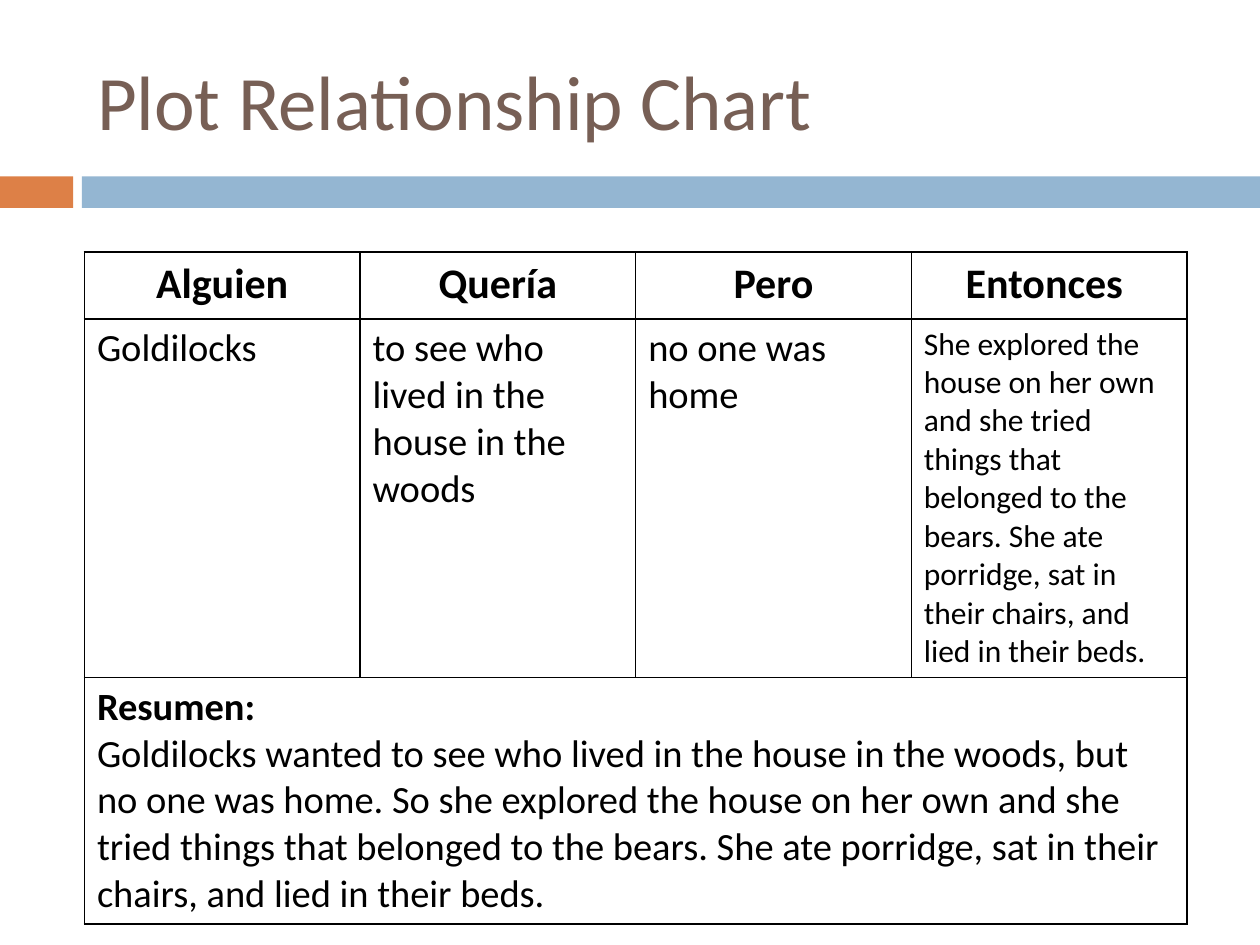
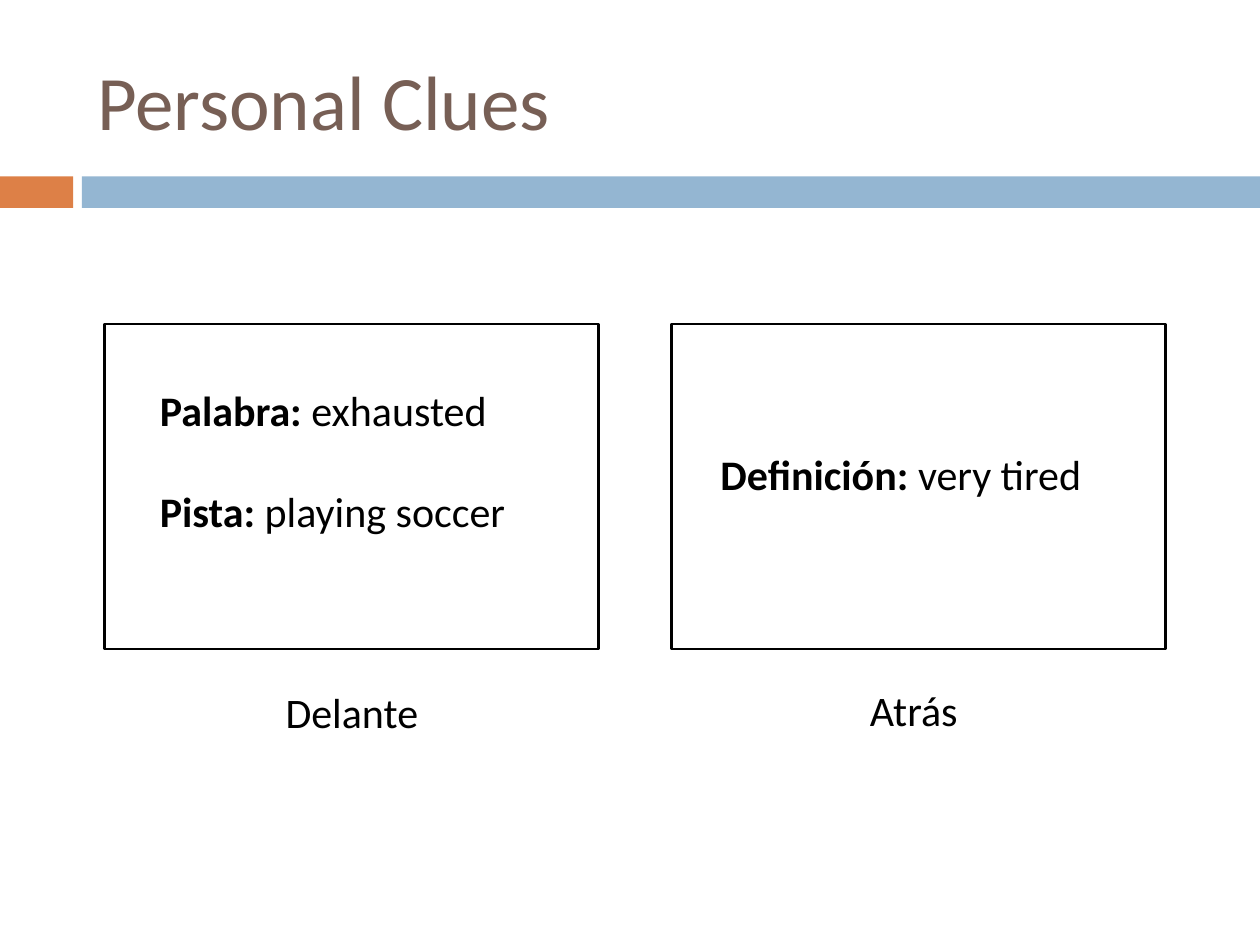
"""Build two reading-strategy slides: a plot relationship chart and personal clues."""
from lxml.etree import SubElement
from pptx import Presentation
from pptx.dml.color import RGBColor
from pptx.enum.shapes import MSO_SHAPE
from pptx.enum.text import MSO_ANCHOR, PP_ALIGN
from pptx.oxml.ns import qn
from pptx.util import Inches, Pt

FONT = "Calibri"
BLACK = RGBColor(0x00, 0x00, 0x00)
BROWN = RGBColor(0x77, 0x5F, 0x55)
ORANGE = RGBColor(0xDD, 0x80, 0x47)
BLUE = RGBColor(0x94, 0xB6, 0xD2)

BANDS = [(0, 0.58, ORANGE), (0.65, 9.35, BLUE)]

HEADERS = ["Alguien", "Quería", "Pero", "Entonces "]
STORY = [
    ("Goldilocks", 22),
    ("to see who lived in the house in the woods", 22),
    ("no one was home", 22),
    ("She explored the house on her own and she tried things that belonged "
     "to the bears. She ate porridge, sat in their chairs, and lied in their beds.", 18),
]
SUMMARY = [
    [("Resumen:", True)],
    [("Goldilocks wanted to see who lived in the house in the woods, but no one "
      "was home. So she explored the house on her own and she tried things that "
      "belonged to the bears. She ate porridge, sat in their chairs, and lied in "
      "their beds.", False)],
]
ROW_HEIGHTS = [0.53, 2.44, 1.94]
TABLE_WIDTH = 8.75

CARDS = [
    {"left": 0.83,
     "clues": [[("Palabra: ", True), ("exhausted", False)],
               [("Pista: ", True), ("playing soccer", False)]],
     "clue_box": (1.17, 3, 3.33, 1.31),
     "caption": "Delante ", "caption_box": (1.79, 5.4, 2.08, 0.5)},
    {"left": 5.33,
     "clues": [[("Definición: ", True), ("very tired", False)]],
     "clue_box": (5.62, 3.51, 3.33, 0.5),
     "caption": "Atrás ", "caption_box": (6.25, 5.38, 2.08, 0.5)},
]


def inches(*values):
    """Convert several numbers to lengths."""
    return [Inches(v) for v in values]


def write(tf, paragraphs, size, color=BLACK, align=PP_ALIGN.LEFT, gap=0):
    """Fill a text frame with paragraphs of (text, bold) runs."""
    for i, runs in enumerate(paragraphs):
        p = tf.add_paragraph() if i else tf.paragraphs[0]
        p.alignment = align
        if i and gap:
            p.space_before = Pt(gap)
        for text, bold in runs:
            r = p.add_run()
            r.text = text
            r.font.name, r.font.size, r.font.bold = FONT, Pt(size), bold
            r.font.color.rgb = color


def add_rect(s, box, fill=None, line=None):
    """Add a plain rectangle."""
    sp = s.shapes.add_shape(MSO_SHAPE.RECTANGLE, *inches(*box))
    sp.shadow.inherit = False
    if fill is None:
        sp.fill.background()
    else:
        sp.fill.solid()
        sp.fill.fore_color.rgb = fill
    if line is None:
        sp.line.fill.background()
    else:
        sp.line.color.rgb = line
        sp.line.width = Pt(1.5)


def add_text(s, box, paragraphs, **style):
    """Add a wrapping text box."""
    tf = s.shapes.add_textbox(*inches(*box)).text_frame
    tf.word_wrap = True
    write(tf, paragraphs, 24, **style)


def add_slide(prs, title):
    """Add a slide with the shared bands and title."""
    s = prs.slides.add_slide(prs.slide_layouts[5])
    for left, width, color in BANDS:
        add_rect(s, (left, 1.4, width, 0.25), fill=color)
    sp = s.shapes.title
    sp.left, sp.top, sp.width, sp.height = inches(0.67, 0.25, 8.92, 1.08)
    sp.text_frame.vertical_anchor = MSO_ANCHOR.MIDDLE
    write(sp.text_frame, [[(title, False)]], 44, BROWN)
    return s


def frame_cell(cell):
    """Give a cell thin black borders and no fill."""
    tc_pr = cell._tc.get_or_add_tcPr()
    for side in ("a:lnL", "a:lnR", "a:lnT", "a:lnB"):
        ln = SubElement(tc_pr, qn(side), w=str(Pt(1)))
        SubElement(SubElement(ln, qn("a:solidFill")), qn("a:srgbClr"), val=str(BLACK))
    cell.fill.background()


def build_plot_chart(prs):
    """Build the slide with the plot table."""
    s = add_slide(prs, "Plot Relationship Chart")
    box = inches(0.67, 2, TABLE_WIDTH, sum(ROW_HEIGHTS))
    table = s.shapes.add_table(len(ROW_HEIGHTS), len(HEADERS), *box).table
    table.first_row = table.horz_banding = False
    for row, height in zip(table.rows, ROW_HEIGHTS):
        row.height = Inches(height)
    for cell in table.iter_cells():
        frame_cell(cell)
    for col, (header, (text, size)) in enumerate(zip(HEADERS, STORY)):
        write(table.cell(0, col).text_frame, [[(header, True)]], 24, align=PP_ALIGN.CENTER)
        write(table.cell(1, col).text_frame, [[(text, False)]], size)
    summary = table.cell(2, 0)
    summary.merge(table.cell(2, len(HEADERS) - 1))
    write(summary.text_frame, SUMMARY, 22)


def build_personal_clues(prs):
    """Build the slide with the front and back of a word card."""
    s = add_slide(prs, "Personal Clues")
    for card in CARDS:
        add_rect(s, (card["left"], 2.57, 3.92, 2.58), line=BLACK)
        add_text(s, card["clue_box"], card["clues"], gap=29)
        add_text(s, card["caption_box"], [[(card["caption"], False)]], align=PP_ALIGN.CENTER)


def main():
    """Create and save the presentation."""
    prs = Presentation()
    prs.slide_width, prs.slide_height = inches(10, 7.5)
    build_plot_chart(prs)
    build_personal_clues(prs)
    prs.save("out.pptx")


if __name__ == "__main__":
    main()
